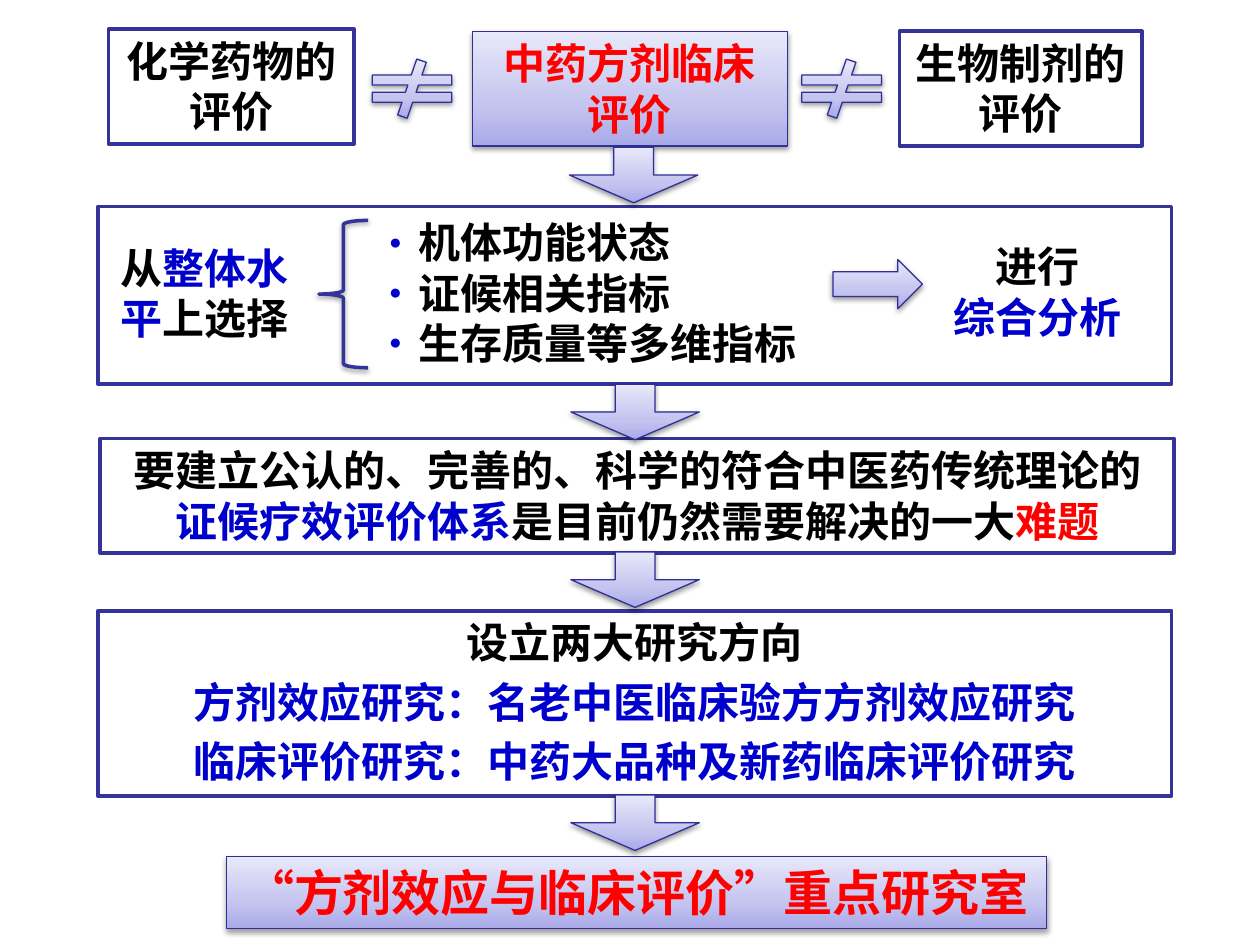
import dataclasses

import lxml.etree
import pptx
import pptx.dml.color
import pptx.enum.shapes
import pptx.enum.text
import pptx.oxml.ns
import pptx.util

Pt = pptx.util.Pt
MSO = pptx.enum.shapes.MSO_SHAPE
ALIGN = pptx.enum.text.PP_ALIGN
qn = pptx.oxml.ns.qn

COLORS = {
    "black": "000000", "white": "FFFFFF", "blue": "0000CC", "red": "FF0000",
    "frame": "333399", "edge": "2F2F98",
    "dark": "A9A9E9", "mid": "C4C4EF", "light": "E8E8FA",
}
GRADIENT = [(0, "dark"), (35, "mid"), (100, "light")]
FONT = {"name": "Arial", "bold": True}
FRAME = {"word_wrap": True, "auto_size": pptx.enum.text.MSO_AUTO_SIZE.NONE,
         "vertical_anchor": pptx.enum.text.MSO_ANCHOR.TOP}


@dataclasses.dataclass
class Box:
    """A text box; each paragraph is a list of (text, colour) runs."""
    left: float
    top: float
    width: float
    height: float
    paragraphs: list = dataclasses.field(default_factory=list)
    line: str = "frame"
    glossy: bool = False
    size: float = 24
    align: ALIGN = ALIGN.CENTER
    gap: float = 0
    bullets: bool = False
    wrap: bool = True


@dataclasses.dataclass
class Symbol:
    kind: MSO
    left: float
    top: float
    width: float
    height: float
    adjustments: tuple = ()
    filled: bool = True


def rgb(name: str) -> pptx.dml.color.RGBColor:
    return pptx.dml.color.RGBColor.from_string(COLORS[name])


def set_attributes(obj, values: dict) -> None:
    for name, value in values.items():
        setattr(obj, name, value)


def add_xml(parent, tag: str, **attributes):
    return lxml.etree.SubElement(parent, qn(tag), attributes)


def add_shape(slide, kind, left, top, width, height):
    sp = slide.shapes.add_shape(kind, Pt(left), Pt(top), Pt(width), Pt(height))
    sp.shadow.inherit = False
    return sp


def set_line(sp, color: str, width: float) -> None:
    sp.line.color.rgb = rgb(color)
    sp.line.width = Pt(width)


def add_gradient(sp) -> None:
    sp.fill.gradient()
    sp.fill.gradient_angle = 90
    stops = sp.element.spPr.find(qn("a:gradFill")).find(qn("a:gsLst"))
    for stop in list(stops):
        stops.remove(stop)
    for percent, color in GRADIENT:
        stop = add_xml(stops, "a:gs", pos=str(percent * 1000))
        add_xml(stop, "a:srgbClr", val=COLORS[color])


def add_shadow(sp) -> None:
    effects = sp.element.spPr.find(qn("a:effectLst"))
    shadow = add_xml(effects, "a:outerShdw", blurRad=str(Pt(3.1)),
                     dist=str(Pt(1.6)), dir="5400000", rotWithShape="0")
    color = add_xml(shadow, "a:srgbClr", val=COLORS["black"])
    add_xml(color, "a:alpha", val="38000")


def add_bullet(p) -> None:
    pPr = p._p.get_or_add_pPr()
    pPr.set("marL", str(Pt(17)))
    pPr.set("indent", str(Pt(-17)))
    add_xml(add_xml(pPr, "a:buClr"), "a:srgbClr", val=COLORS["blue"])
    add_xml(pPr, "a:buSzPct", val="50000")
    add_xml(pPr, "a:buFont", typeface="Arial")
    add_xml(pPr, "a:buChar", char="●")


def add_text(sp, box: Box) -> None:
    tf = sp.text_frame
    set_attributes(tf, FRAME | {"word_wrap": box.wrap})
    for i, runs in enumerate(box.paragraphs):
        p = tf.add_paragraph() if i else tf.paragraphs[0]
        p.alignment = box.align
        if i and box.gap:
            p.space_before = Pt(box.gap)
        if box.bullets:
            add_bullet(p)
        for text, color in runs:
            r = p.add_run()
            r.text = text
            set_attributes(r.font, FONT | {"size": Pt(box.size)})
            r.font.color.rgb = rgb(color)


def draw_box(slide, box: Box) -> None:
    sp = add_shape(slide, MSO.RECTANGLE, box.left, box.top, box.width, box.height)
    if box.glossy:
        add_gradient(sp)
        set_line(sp, "edge", 0.75)
        add_shadow(sp)
    else:
        sp.fill.solid()
        sp.fill.fore_color.rgb = rgb("white")
        set_line(sp, box.line, 2)
    add_text(sp, box)


def draw_symbol(slide, s: Symbol) -> None:
    sp = add_shape(slide, s.kind, s.left, s.top, s.width, s.height)
    for i, value in enumerate(s.adjustments):
        sp.adjustments[i] = value
    if s.filled:
        add_gradient(sp)
        set_line(sp, "edge", 0.75)
    else:
        sp.fill.background()
        set_line(sp, "frame", 2)
    add_shadow(sp)


BOXES = [
    # Three kinds of evaluation
    Box(270, 18, 180, 65.5, [[("中药方剂临床评价", "red")]], glossy=True),
    Box(62, 16.7, 140.4, 65.5, [[("化学药物的评价", "black")]]),
    Box(514, 17.8, 138.5, 65.5, [[("生物制剂的评价", "black")]]),
    # Choice of indicators and their analysis
    Box(56, 118, 613.5, 101.5),
    Box(215.3, 120.3, 323.3, 94.3,
        [[("机体功能状态", "black")], [("证候相关指标", "black")],
         [("生存质量等多维指标", "black")]],
        line="white", align=ALIGN.LEFT, bullets=True),
    Box(62, 135, 113.8, 65.5,
        [[("从", "black"), ("整体水平", "blue"), ("上选择", "black")]],
        line="white", align=ALIGN.LEFT),
    Box(530, 134, 126, 65.5, [[("进行", "black")], [("综合分析", "blue")]],
        line="white"),
    # Open problem
    Box(57.3, 250.6, 613.5, 65.5,
        [[("要建立公认的、完善的、科学的符合中医药传统理论的", "black"),
          ("证候疗效评价体系", "blue"),
          ("是目前仍然需要解决的一大", "black"), ("难题", "red")]]),
    # Research directions
    Box(56, 349, 613.5, 106,
        [[("设立两大研究方向", "black")],
         [("方剂效应研究：名老中医临床验方方剂效应研究", "blue")],
         [("临床评价研究：中药大品种及新药临床评价研究", "blue")]], gap=5),
    # Resulting research unit
    Box(129.4, 489.4, 468.7, 41.2,
        [[("“方剂效应与临床评价”重点研究室", "red")]],
        glossy=True, size=28, wrap=False),
]

SYMBOLS = [
    Symbol(MSO.LEFT_BRACE, 182.2, 126, 28.1, 84.2, filled=False),
    Symbol(MSO.RIGHT_ARROW, 476, 148.3, 51.1, 28.1),
    # Arrows between the steps
    *[Symbol(MSO.DOWN_ARROW, left, top, 73.4, 31.7, (0.31, 0.5))
      for left, top in [(325.4, 84.2), (326.2, 219.6), (326.2, 315.4), (326.2, 454.3)]],
    # Inequality signs
    *[Symbol(MSO.MATH_NOT_EQUAL, left, 33.8, 61.9, 33.8, (0.17, 65.31, 0.12))
      for left in (204.5, 450)],
]


def main() -> None:
    prs = pptx.Presentation()
    prs.slide_width, prs.slide_height = Pt(720), Pt(540)
    slide = prs.slides.add_slide(prs.slide_layouts[6])
    for box in BOXES:
        draw_box(slide, box)
    for symbol in SYMBOLS:
        draw_symbol(slide, symbol)
    prs.save("out.pptx")


if __name__ == "__main__":
    main()
